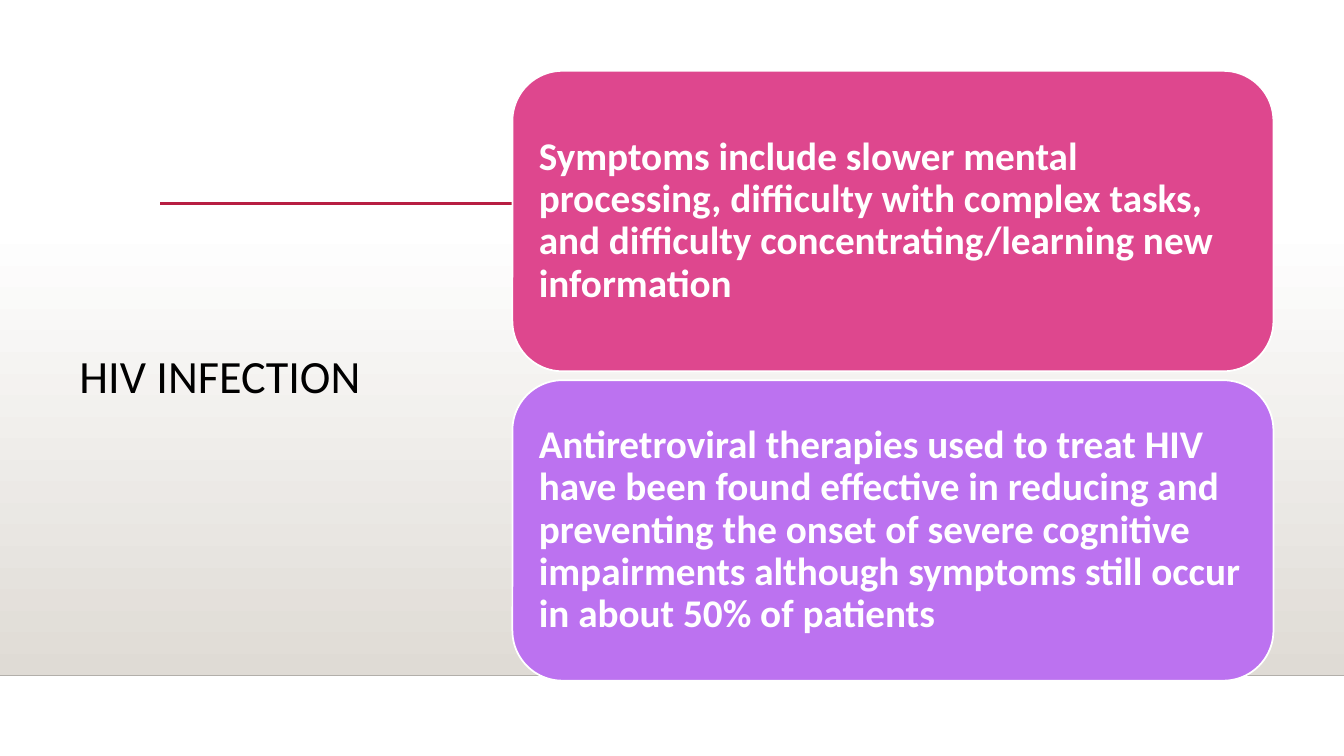
from pptx import Presentation
from pptx.dml.color import RGBColor
from pptx.enum.shapes import MSO_CONNECTOR, MSO_SHAPE
from pptx.enum.text import MSO_ANCHOR, PP_ALIGN
from pptx.oxml.ns import qn
from pptx.util import Pt
from lxml import etree

RECTANGLE = MSO_SHAPE.RECTANGLE
ROUNDED = MSO_SHAPE.ROUNDED_RECTANGLE
STRAIGHT = MSO_CONNECTOR.STRAIGHT
MIDDLE = MSO_ANCHOR.MIDDLE
LEFT = PP_ALIGN.LEFT

SLIDE_WIDTH, SLIDE_HEIGHT = 960, 540
FLOOR_TOP, FLOOR_BOTTOM = 159, 482.4


def color(hex_string):
    return RGBColor.from_string(hex_string)


def write_text(shape, text, size, hex_string, bold, inset):
    frame = shape.text_frame
    frame.word_wrap = True
    frame.vertical_anchor = MIDDLE
    frame.margin_left = frame.margin_right = Pt(inset)
    frame.margin_top = frame.margin_bottom = Pt(inset)
    paragraph = frame.paragraphs[0]
    paragraph.text = text
    paragraph.alignment = LEFT
    paragraph.line_spacing = 0.9
    paragraph.font.name = "Calibri"
    paragraph.font.size = Pt(size)
    paragraph.font.bold = bold
    paragraph.font.color.rgb = color(hex_string)


presentation = Presentation()
presentation.slide_width = Pt(SLIDE_WIDTH)
presentation.slide_height = Pt(SLIDE_HEIGHT)
slide = presentation.slides.add_slide(presentation.slide_layouts[6])
shapes = slide.shapes

# Shaded floor, fading from white down to warm grey
floor = shapes.add_shape(RECTANGLE, Pt(0), Pt(FLOOR_TOP),
                         Pt(SLIDE_WIDTH), Pt(FLOOR_BOTTOM - FLOOR_TOP))
floor.shadow.inherit = False
floor.line.fill.background()
floor.fill.gradient()
floor.fill.gradient_angle = 270
for stop, (position, shade) in zip(floor.fill.gradient_stops,
                                   [(0, "FFFFFF"), (1, "DFDBD5")]):
    stop.position = position
    stop.color.rgb = color(shade)

# Floor edge and red accent rule: left, right, y, colour, width
rules = [
    (0, SLIDE_WIDTH, FLOOR_BOTTOM, "B2AFAA", 1),
    (114.5, 871.2, 145.4, "B71E42", 2.5),
]
for left, right, y, shade, width in rules:
    rule = shapes.add_connector(STRAIGHT, Pt(left), Pt(y), Pt(right), Pt(y))
    rule.line.color.rgb = color(shade)
    rule.line.width = Pt(width)
    etree.SubElement(rule._element.spPr, qn("a:effectLst"))

# Title
title = shapes.add_textbox(Pt(49.7), Pt(50.4), Pt(269.3), Pt(439.9))
write_text(title, "HIV INFECTION", 33, "000000", False, 7.2)

# Stacked cards
CARD_TOP, CARD_HEIGHT, CARD_GAP = 50.6, 214.6, 6.4
cards = [
    ("DE478E", "Symptoms include slower mental processing, difficulty with "
     "complex tasks, and difficulty concentrating/learning new information"),
    ("BC72F0", "Antiretroviral therapies used to treat HIV have been found "
     "effective in reducing and preventing the onset of severe cognitive "
     "impairments although symptoms still occur in about 50% of patients"),
]
for index, (shade, text) in enumerate(cards):
    top = CARD_TOP + index * (CARD_HEIGHT + CARD_GAP)
    card = shapes.add_shape(ROUNDED, Pt(366), Pt(top), Pt(543.6), Pt(CARD_HEIGHT))
    card.shadow.inherit = False
    card.fill.solid()
    card.fill.fore_color.rgb = color(shade)
    card.line.color.rgb = color("FFFFFF")
    card.line.width = Pt(1.25)
    write_text(card, text, 28, "FFFFFF", True, 8.4)

presentation.save("out.pptx")
